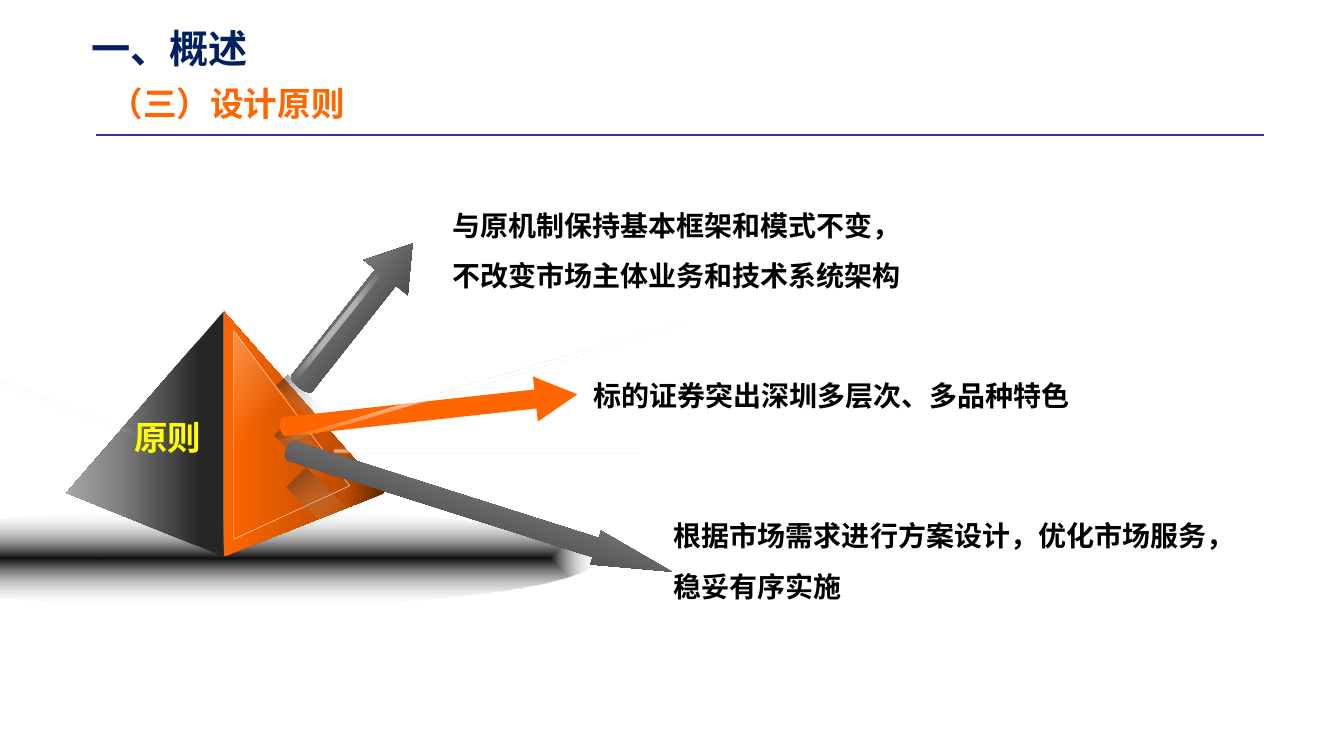
import math

import pptx
import pptx.dml.color
import pptx.enum.shapes
import pptx.enum.text
import pptx.oxml
import pptx.oxml.ns
import pptx.util
from lxml import etree

SCALE = 9144  # EMU per px, 100 px to the inch
WIDTH, HEIGHT = 1334, 750
FONT = "Noto Sans CJK SC"
SHAPES = pptx.enum.shapes.MSO_SHAPE

# Gradients: stops of (position %, colour, opacity %), then angle, or None for a radial one
STEEL = [(15, "262626", 100), (67, "808080", 100), (100, "A6A6A6", 100)], 180
AMBER = [(0, "5C2500", 100), (25, "BF4D00", 100), (100, "FF6600", 100)], 180
SHEEN = [(0, "FFFFFF", 30), (36, "FFFFFF", 0)], 45
GLINT = [(37, "FFFFFF", 50), (96, "FFFFFF", 0)], None
SHADE = [(0, "000000", 50), (87, "FFFFFF", 0)], 90
GROUND = [(0, "121212", 100), (100, "FFFFFF", 0)], None

# Corners, fill, outline colour
FACES = [
    ([(222, 309), (222, 552), (66, 489)], STEEL, None),
    ([(222, 309), (222, 552), (382, 489)], AMBER, None),
    ([(232, 328), (232, 535), (347, 482)], SHEEN, "FFFFFF"),
]
GROUND_SHADOW = (-149, 506, 742, 96)
EDGE_GLINT = ((-54, 150, 4, 420), 111)
ARROW_SHADES = [
    ((301, 465, 28, 58), 315.1),
    ((293, 369, 16, 58), 315.1),
    ((290, 416, 22, 58), 315.1),
]
# Upright box, rotation, head length, shaft width, fill, then glint box and rotation
ARROWS = [
    ((325, 222, 56, 182), 38.4, 43, 26, STEEL, (332, 255, 6, 136), 38.4),
    ((403, 259, 45, 297), 83.7, 42, 19, "FF6600", (476, 162, 4, 435), 253.7),
    ((458, 306, 35, 401), 107.6, 79, 20, STEEL, (481, 296, 4, 303), 90),
]
# Box, lines, size, colour, line spacing, centred
TEXTS = [
    ((81, 19, 520, 57), ["一、概述"], 28, "002060", 1, False),
    ((99, 77, 871, 50), ["（三）设计原则"], 24, "FF6600", 1, False),
    ((439, 185, 882, 103),
     ["与原机制保持基本框架和模式不变，", "不改变市场主体业务和技术系统架构"],
     20, "000000", 1.5, False),
    ((579, 354, 505, 61), ["标的证券突出深圳多层次、多品种特色"], 20, "000000", 1.5, False),
    ((659, 493, 630, 103),
     ["根据市场需求进行方案设计，优化市场服务，", "稳妥有序实施"],
     20, "000000", 1.5, False),
    ((92, 409, 149, 50), ["原则"], 24, "FFFF00", 1, True),
]
RULE = (95, 134, 1255, 134)


def px(*lengths):
    return [round(n * SCALE) for n in lengths]


def rgb(color):
    return pptx.dml.color.RGBColor.from_string(color)


def set_gradient(shape, stops, angle):
    gs = "".join(
        f'<a:gs pos="{pos * 1000}"><a:srgbClr val="{color}">'
        f'<a:alpha val="{opacity * 1000}"/></a:srgbClr></a:gs>'
        for pos, color, opacity in stops)
    if angle is None:
        way = ('<a:path path="shape"><a:fillToRect l="50000" t="50000" '
               'r="50000" b="50000"/></a:path>')
    else:
        way = f'<a:lin ang="{angle * 60000}" scaled="0"/>'
    shape.fill.background()
    old = shape._element.spPr.find(pptx.oxml.ns.qn("a:noFill"))
    new = pptx.oxml.parse_xml(
        f'<a:gradFill {pptx.oxml.ns.nsdecls("a")} rotWithShape="1">'
        f'<a:gsLst>{gs}</a:gsLst>{way}</a:gradFill>')
    old.getparent().replace(old, new)


def paint(shape, fill, outline=None):
    shape.shadow.inherit = False
    if isinstance(fill, str):
        shape.fill.solid()
        shape.fill.fore_color.rgb = rgb(fill)
    else:
        set_gradient(shape, *fill)
    if outline:
        shape.line.color.rgb = rgb(outline)
        shape.line.width = pptx.util.Pt(0.25)
    else:
        shape.line.fill.background()


def add_preset(s, kind, box, fill, rotation=0):
    sp = s.shapes.add_shape(kind, *px(*box))
    if kind == SHAPES.ROUNDED_RECTANGLE:
        sp.adjustments[0] = 0.5
    sp.rotation = rotation
    paint(sp, fill)


def add_polygon(s, points, fill, outline=None):
    start, *rest = [tuple(px(*point)) for point in points]
    builder = s.shapes.build_freeform(*start, scale=1.0)
    builder.add_line_segments(rest, close=True)
    sp = builder.convert_to_shape()
    paint(sp, fill, outline)
    return sp


def add_arrow(s, box, rotation, head, shaft, fill):
    """Draw an upright arrow with a rounded tail, then turn it."""
    x, y, w, h = box
    mid, half, depth = x + w / 2, shaft / 2, 5
    tail = [(mid + half * math.cos(a), y + h - depth + depth * math.sin(a))
            for a in (math.pi * i / 12 for i in range(13))]
    neck = y + head
    points = [(mid, y), (x + w, neck), (mid + half, neck), *tail,
              (mid - half, neck), (x, neck)]
    add_polygon(s, points, fill).rotation = rotation


def add_text(s, box, lines, size, color, spacing, centred):
    tf = s.shapes.add_textbox(*px(*box)).text_frame
    tf.word_wrap = True
    tf.auto_size = pptx.enum.text.MSO_AUTO_SIZE.SHAPE_TO_FIT_TEXT
    formats = {"name": FONT, "size": pptx.util.Pt(size), "bold": True}
    for i, line in enumerate(lines):
        p = tf.add_paragraph() if i else tf.paragraphs[0]
        p.line_spacing = spacing
        if centred:
            p.alignment = pptx.enum.text.PP_ALIGN.CENTER
        r = p.add_run()
        r.text = line
        for name, value in formats.items():
            setattr(r.font, name, value)
        r.font.color.rgb = rgb(color)
        ea = etree.SubElement(r._r.get_or_add_rPr(), pptx.oxml.ns.qn("a:ea"))
        ea.set("typeface", FONT)


def add_rule(s):
    line = s.shapes.add_connector(pptx.enum.shapes.MSO_CONNECTOR.STRAIGHT, *px(*RULE))
    line.line.color.rgb = rgb("333399")
    line.line.width = pptx.util.Pt(2)
    etree.SubElement(line._element.spPr, pptx.oxml.ns.qn("a:effectLst"))


def main():
    prs = pptx.Presentation()
    prs.slide_width, prs.slide_height = px(WIDTH, HEIGHT)
    s = prs.slides.add_slide(prs.slide_layouts[6])
    add_preset(s, SHAPES.OVAL, GROUND_SHADOW, GROUND)
    for face in FACES:
        add_polygon(s, *face)
    box, rotation = EDGE_GLINT
    add_preset(s, SHAPES.ROUNDED_RECTANGLE, box, GLINT, rotation)
    for box, rotation in ARROW_SHADES:
        add_preset(s, SHAPES.RECTANGLE, box, SHADE, rotation)
    for *arrow, glint_box, glint_rotation in ARROWS:
        add_arrow(s, *arrow)
        add_preset(s, SHAPES.ROUNDED_RECTANGLE, glint_box, GLINT, glint_rotation)
    for text in TEXTS:
        add_text(s, *text)
    add_rule(s)
    prs.save("out.pptx")


if __name__ == "__main__":
    main()
